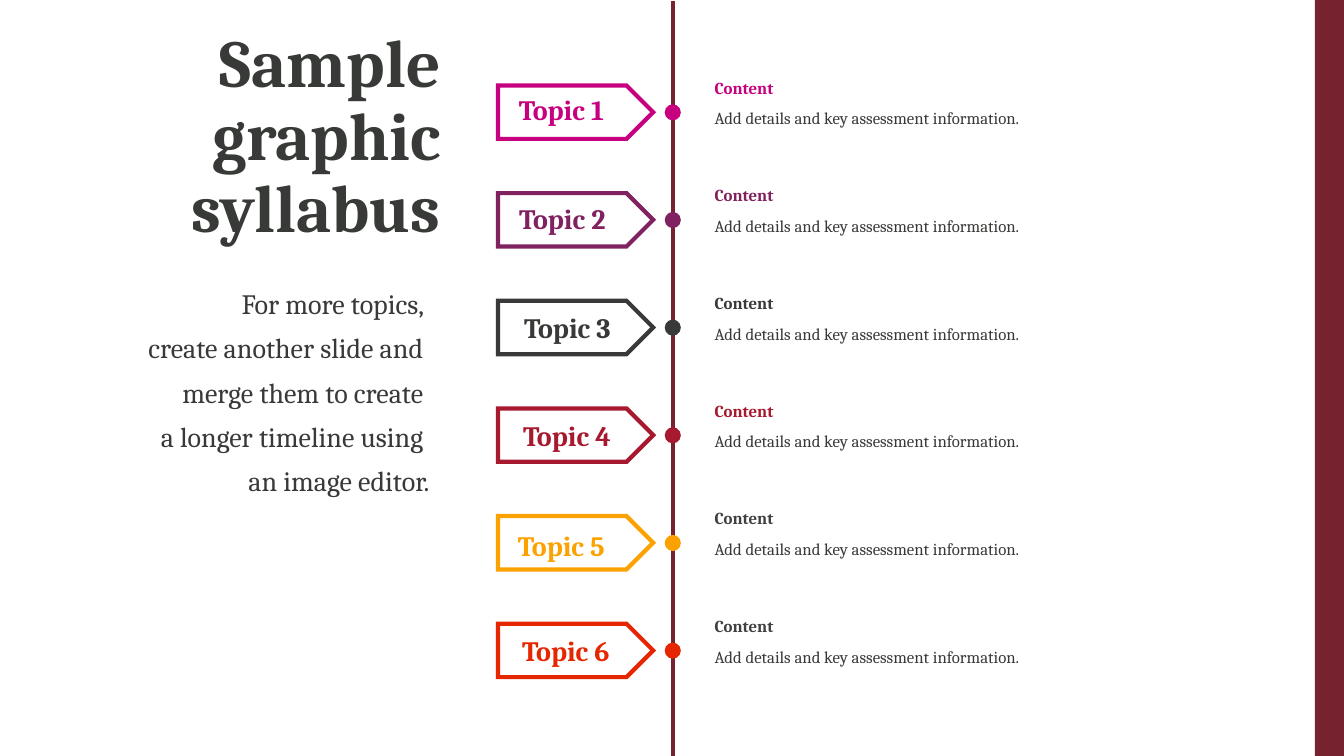
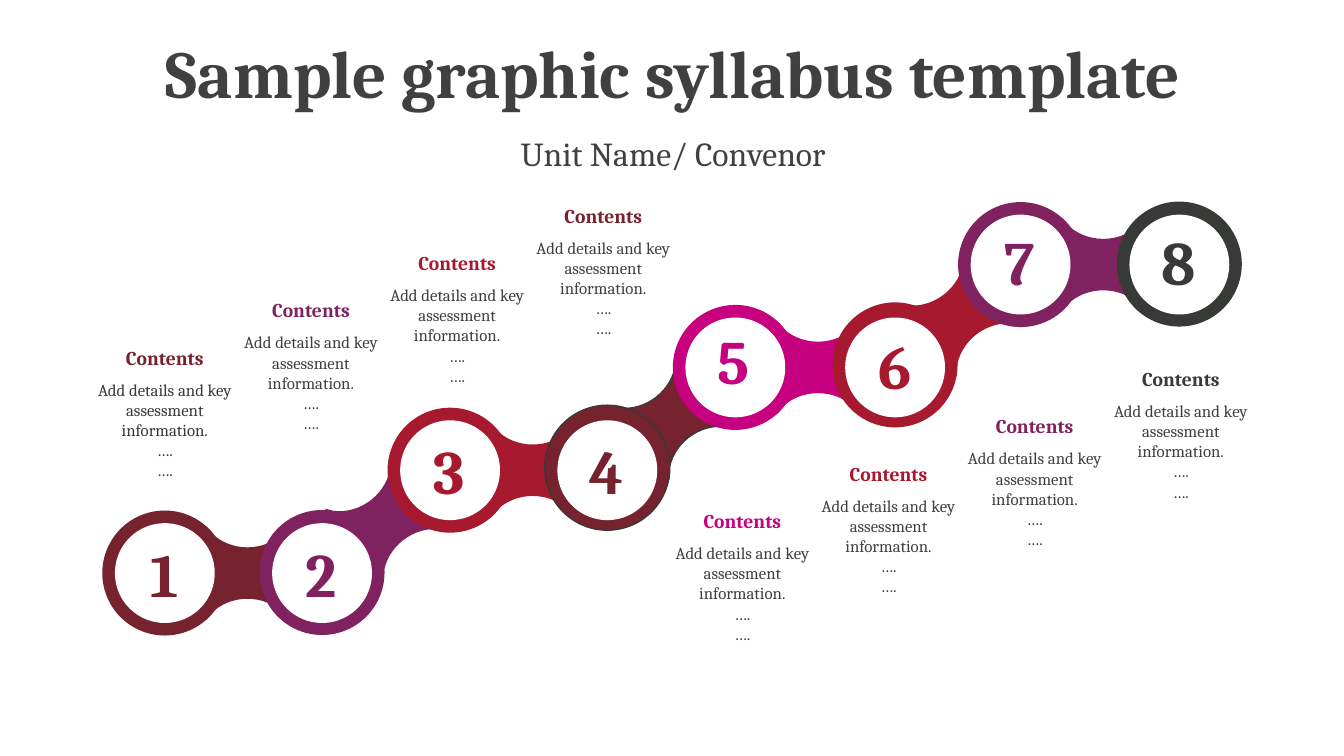
"""Build two graphic syllabus slides: a topic timeline and a rising chain of steps."""
from dataclasses import dataclass

from lxml import etree
from pptx import Presentation
from pptx.dml.color import RGBColor
from pptx.enum.shapes import MSO_CONNECTOR, MSO_SHAPE
from pptx.enum.text import MSO_ANCHOR, PP_ALIGN
from pptx.oxml.ns import qn
from pptx.shapes.base import BaseShape
from pptx.slide import Slide
from pptx.util import Inches, Pt

ELLIPSE, PENTAGON, RECTANGLE = MSO_SHAPE.OVAL, MSO_SHAPE.PENTAGON, MSO_SHAPE.RECTANGLE
STRAIGHT = MSO_CONNECTOR.STRAIGHT
TOP, MIDDLE = MSO_ANCHOR.TOP, MSO_ANCHOR.MIDDLE
LEFT, CENTER, RIGHT = PP_ALIGN.LEFT, PP_ALIGN.CENTER, PP_ALIGN.RIGHT

CELL = Inches(0.01)
COLUMNS, ROWS = 1333.33, 750

MAROON = RGBColor(0x76, 0x23, 0x2F)
PURPLE = RGBColor(0x80, 0x22, 0x5F)
CHARCOAL = RGBColor(0x37, 0x3A, 0x36)
GRAY = RGBColor(0x40, 0x40, 0x40)
RED = RGBColor(0xA6, 0x19, 0x2E)
AMBER = RGBColor(0xFB, 0xA2, 0x00)
ORANGE = RGBColor(0xE6, 0x26, 0x01)
MAGENTA = RGBColor(0xC6, 0x00, 0x7E)
WHITE = RGBColor(0xFF, 0xFF, 0xFF)

DETAILS = "Add details and key assessment information."
TITLE_SIZE = 48
BODY_SIZE = 12


@dataclass(frozen=True)
class Box:
    """A rectangle in grid cells."""
    left: float
    top: float
    width: float
    height: float


@dataclass(frozen=True)
class TextStyle:
    """The look of the text in one box."""
    size: float
    color: RGBColor
    bold: bool = False
    alignment: PP_ALIGN = LEFT
    anchor: MSO_ANCHOR = TOP
    line_spacing: float = 1.0
    space_before: float = 0
    side_margin: float = 10


@dataclass(frozen=True)
class Topic:
    """A timeline row with its label's shift inside the tag."""
    color: RGBColor
    heading_color: RGBColor
    label_right: float
    label_down: float


@dataclass(frozen=True)
class Step:
    """A numbered ring of the chain, with its shift and that of its number."""
    column: float
    color: RGBColor
    details_color: RGBColor = GRAY
    ring_down: float = 0
    number_right: float = -0.5
    number_down: float = 0
    outline: RGBColor | None = None


TOPICS = (
    Topic(MAGENTA, MAGENTA, 0, 2),
    Topic(PURPLE, PURPLE, 1, 3),
    Topic(CHARCOAL, CHARCOAL, 6, 4.5),
    Topic(RED, RED, 5.5, 5),
    Topic(AMBER, GRAY, 0, 7),
    Topic(ORANGE, GRAY, 4.5, 4.5),
)
FIRST_ROW, LAST_ROW = 85, 619
ROW_PITCH = (LAST_ROW - FIRST_ROW) / (len(TOPICS) - 1)
TAG_LEFT, AXIS, CONTENT_LEFT = 494, 668, 699

STEPS = (
    Step(163.5, MAROON, details_color=CHARCOAL),
    Step(319.5, PURPLE, ring_down=-0.5),
    Step(446.5, RED),
    Step(602.5, MAROON, ring_down=-2.5, outline=CHARCOAL),
    Step(729.5, MAGENTA, number_right=-1.5, number_down=-7),
    Step(888, RED, ring_down=-2.5, number_down=-2),
    Step(1012.5, PURPLE, number_down=-3),
    Step(1170, CHARCOAL, ring_down=-0.5, number_down=-3),
)
LOWEST_LEVEL, LEVEL_RISE = 568.5, 102
RING, HOLE = 124, 99
LINK_ANGLE = -38.2
LINK_QUARTER = ((-50.5, -46), (-40.5, -46), (-36, -40), (-27, -31), (-14, -25.5), (0, -25.5))
LINK_CURVE_STARTS = (2, 5, 13, 16)
CONTENT_STARTS = ((84, 338), (657, 500))
CONTENT_RIGHT, CONTENT_RISE, CONTENT_GROUP = 145, 47, 4


def set_values(target: object, values: dict[str, object]) -> None:
    """Set every attribute named in the dict."""
    for name, value in values.items():
        setattr(target, name, value)


def centered(column: float, row: float, width: float, height: float) -> Box:
    """Return a box around a centre."""
    return Box(column - width / 2, row - height / 2, width, height)


def emu(box: Box) -> list[int]:
    """Convert a box to slide lengths."""
    return [round(cells * CELL) for cells in (box.left, box.top, box.width, box.height)]


def paint(shape: BaseShape, fill: RGBColor, outline: RGBColor | None = None,
          width: float = 1) -> None:
    """Give a shape a flat fill and an optional outline with sharp corners."""
    shape.shadow.inherit = False
    shape.fill.solid()
    shape.fill.fore_color.rgb = fill
    if outline is None:
        shape.line.fill.background()
    else:
        shape.line.color.rgb = outline
        shape.line.width = Pt(width)
        etree.SubElement(shape._element.spPr.find(qn("a:ln")), qn("a:miter"), lim="800000")


def add_figure(slide: Slide, kind: MSO_SHAPE, box: Box, fill: RGBColor,
               outline: RGBColor | None = None, width: float = 1) -> None:
    """Draw a preset shape."""
    paint(slide.shapes.add_shape(kind, *emu(box)), fill, outline, width)


def add_text(slide: Slide, box: Box, lines: tuple[str, ...], style: TextStyle) -> None:
    """Write one paragraph per line in a wrapping text box."""
    frame = slide.shapes.add_textbox(*emu(box)).text_frame
    margin = round(style.side_margin * CELL)
    set_values(frame, {"word_wrap": True, "vertical_anchor": style.anchor,
                       "margin_left": margin, "margin_right": margin})
    for index, line in enumerate(lines):
        paragraph = frame.add_paragraph() if index else frame.paragraphs[0]
        set_values(paragraph, {"alignment": style.alignment,
                               "line_spacing": style.line_spacing,
                               "space_before": Pt(style.space_before)})
        run = paragraph.add_run()
        run.text = line
        set_values(run.font, {"name": "Cambria", "size": Pt(style.size), "bold": style.bold})
        run.font.color.rgb = style.color


def add_heading(slide: Slide, title_box: Box, title: str, color: RGBColor,
                alignment: PP_ALIGN, body_box: Box, body: tuple[str, ...],
                body_size: float) -> None:
    """Write a slide's title and the text below it."""
    add_text(slide, title_box, (title,),
             TextStyle(TITLE_SIZE, color, True, alignment, MIDDLE, 0.9))
    add_text(slide, body_box, body,
             TextStyle(body_size, color, False, alignment, MIDDLE, 0.9, 10))


def add_axis(slide: Slide) -> None:
    """Draw the vertical line of the timeline."""
    column = round(AXIS * CELL)
    axis = slide.shapes.add_connector(STRAIGHT, column, CELL, column, ROWS * CELL)
    axis.line.color.rgb = MAROON
    axis.line.width = Pt(3)
    etree.SubElement(axis._element.spPr, qn("a:effectLst"))


def add_topic(slide: Slide, index: int, topic: Topic) -> None:
    """Draw a timeline row: dot, tag, label and content."""
    row = FIRST_ROW + index * ROW_PITCH
    add_figure(slide, ELLIPSE, centered(AXIS - 0.5, row + 26.5, 16, 16), topic.color)
    add_figure(slide, PENTAGON, Box(TAG_LEFT, row - 0.2, 154, 53), WHITE, topic.color, 3)
    add_text(slide, Box(TAG_LEFT + topic.label_right, row + topic.label_down, 126, 44),
             (f"Topic {index + 1}",), TextStyle(20, topic.color, True, CENTER))
    add_text(slide, Box(CONTENT_LEFT, row - 13.3, 542, 30), ("Content",),
             TextStyle(BODY_SIZE, topic.heading_color, True, anchor=MIDDLE))
    add_text(slide, Box(CONTENT_LEFT, row + 17.3, 542, 30), (DETAILS,),
             TextStyle(BODY_SIZE, CHARCOAL))


def link_outline() -> list[tuple[float, float]]:
    """Return the points of the waisted link, from one quarter by symmetry."""
    upper = [*LINK_QUARTER, *((-x, y) for x, y in reversed(LINK_QUARTER[:-1]))]
    return upper + [(x, -y) for x, y in reversed(upper)]


def bend(shape: BaseShape) -> None:
    """Turn the waist's groups of three straight segments into curves."""
    segments = shape._element.spPr.findall(".//" + qn("a:lnTo"))
    for start in LINK_CURVE_STARTS:
        curve = etree.Element(qn("a:cubicBezTo"))
        segments[start].addprevious(curve)
        for segment in segments[start:start + 3]:
            curve.append(segment[0])
            segment.getparent().remove(segment)


def add_link(slide: Slide, column: float, row: float, angle: float, step: Step) -> None:
    """Draw the link that leaves a ring."""
    points = [(round((column + x) * CELL), round((row + y) * CELL))
              for x, y in link_outline()]
    builder = slide.shapes.build_freeform(*points[0])
    builder.add_line_segments(points[1:])
    link = builder.convert_to_shape()
    bend(link)
    link.rotation = angle
    paint(link, step.color, step.outline)


def step_level(index: int) -> float:
    """Return the row of a step; each pair shares one."""
    return LOWEST_LEVEL - index // 2 * LEVEL_RISE


def add_ring(slide: Slide, index: int, step: Step) -> None:
    """Draw a ring's disc on top of the link to the next ring."""
    row = step_level(index)
    if index < len(STEPS) - 1:
        if index % 2:
            add_link(slide, step.column + 64.5, row - 52.5, LINK_ANGLE, step)
        else:
            add_link(slide, step.column + 82, row, 0, step)
    add_figure(slide, ELLIPSE, centered(step.column, row + step.ring_down, RING, RING),
               step.color, step.outline)


def add_number(slide: Slide, index: int, step: Step) -> None:
    """Draw a ring's white centre and its number."""
    row = step_level(index)
    add_figure(slide, ELLIPSE, centered(step.column, row, HOLE, HOLE), WHITE)
    add_text(slide, centered(step.column + step.number_right, row + step.number_down, 61, 84),
             (str(index + 1),), TextStyle(44, step.color, True, CENTER))


def add_contents(slide: Slide, index: int, step: Step) -> None:
    """Write a step's heading and details on its rising stair."""
    group, place = divmod(index, CONTENT_GROUP)
    left, top = CONTENT_STARTS[group]
    left += place * CONTENT_RIGHT
    top -= place * CONTENT_RISE
    add_text(slide, Box(left, top, 159, 34), ("Contents",),
             TextStyle(14, step.color, True, CENTER, side_margin=12))
    add_text(slide, Box(left, top + 33.6, 159, 111), (DETAILS, "….", "…."),
             TextStyle(BODY_SIZE, step.details_color, alignment=CENTER))


def build_timeline(slide: Slide) -> None:
    """Build the topic timeline."""
    add_figure(slide, RECTANGLE, Box(COLUMNS - 29, 0, 29, ROWS), MAROON)
    add_heading(slide, Box(-11, 22, 458, 231), "Sample graphic syllabus", CHARCOAL, RIGHT,
                Box(60, 270, 376, 242),
                ("For more topics, ", "create another slide and ", "merge them to create ",
                 "a longer timeline using ", "an image editor."), 20)
    add_axis(slide)
    for index, topic in enumerate(TOPICS):
        add_topic(slide, index, topic)


def build_chain(slide: Slide) -> None:
    """Build the rising chain of steps."""
    add_heading(slide, Box(1, 33.5, COLUMNS, 85), "Sample graphic syllabus template", GRAY,
                CENTER, Box(1, 131.5, COLUMNS, 46), ("Unit Name/ Convenor",), 24)
    for draw in (add_ring, add_number, add_contents):
        for index, step in enumerate(STEPS):
            draw(slide, index, step)


def main() -> None:
    """Create and save the presentation."""
    presentation = Presentation()
    set_values(presentation, {"slide_width": round(COLUMNS * CELL),
                              "slide_height": ROWS * CELL})
    for build in (build_timeline, build_chain):
        build(presentation.slides.add_slide(presentation.slide_layouts[6]))
    presentation.save("out.pptx")


if __name__ == "__main__":
    main()
